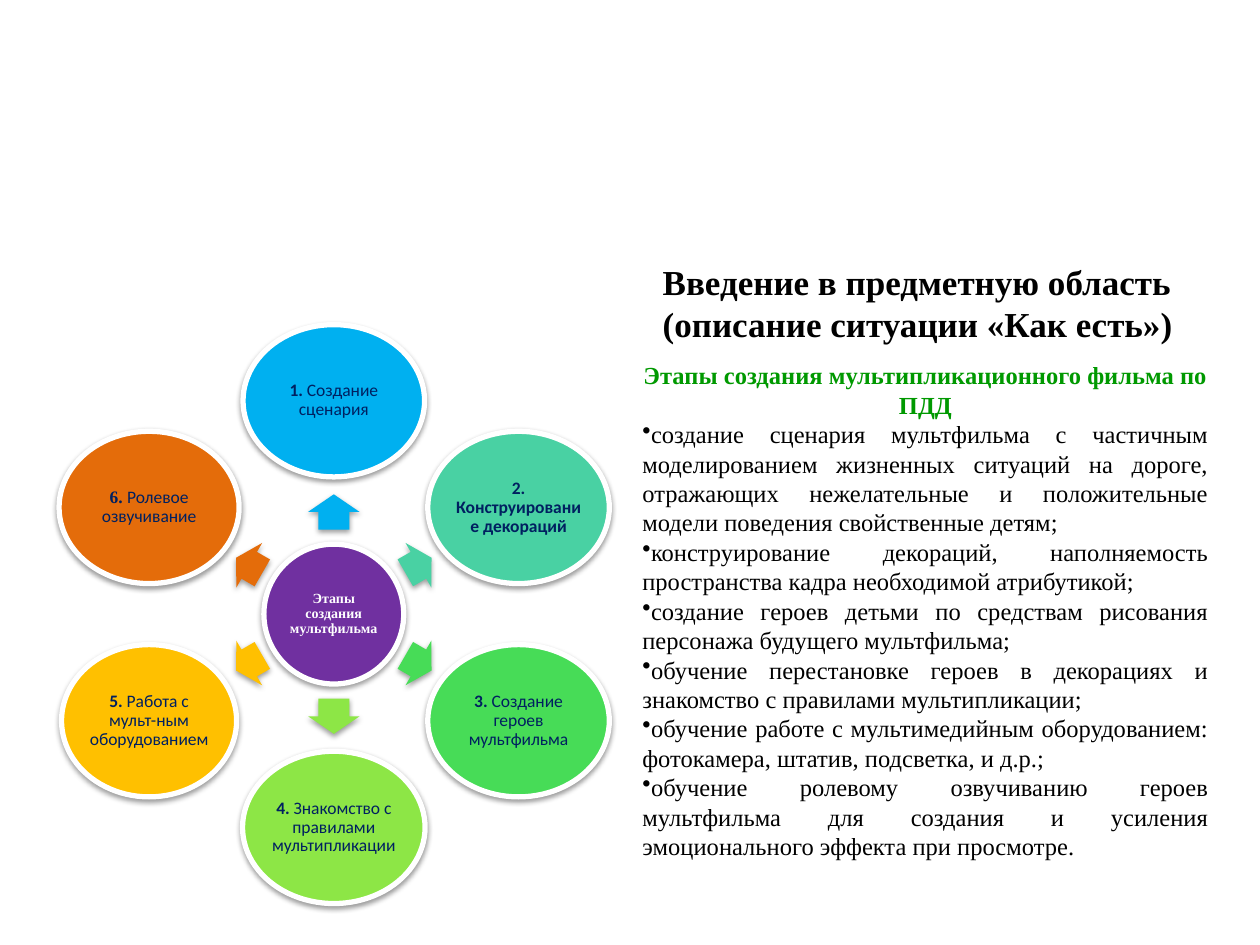
import math
from lxml import etree
from pptx import Presentation
from pptx import util as u
from pptx.dml.color import RGBColor
from pptx.enum import shapes, text
from pptx.oxml import ns

SERIF, SANS = "Times New Roman", "Calibri"
HUB_X, HUB_Y = 6.73, 12.38
RING = 4.3

STAGES = [
    ("1. ", "Создание сценария", "00B0F0", 3.66, SANS),
    ("2. Конструирование декораций", "", "49D1A3", 3.66, SANS),
    ("3. ", "Создание героев мультфильма", "47DC57", 3.66, SANS),
    ("4. ", "Знакомство с правилами мультипликации", "8DE646", 3.68, SANS),
    ("5. ", "Работа с мульт-ным оборудованием", "FFC000", 3.53, SANS),
    ("6. ", "Ролевое озвучивание", "E46C0A", 3.63, SERIF),
]
STEPS = [
    "создание сценария мультфильма с частичным моделированием жизненных ситуаций на дороге, "
    "отражающих нежелательные и положительные модели поведения свойственные детям;",
    "конструирование декораций, наполняемость пространства кадра необходимой атрибутикой;",
    "создание героев детьми по средствам рисования персонажа будущего мультфильма;",
    "обучение перестановке героев в декорациях и знакомство с правилами мультипликации;",
    "обучение работе с мультимедийным оборудованием: фотокамера, штатив, подсветка, и д.р.;",
    "обучение ролевому озвучиванию героев мультфильма для создания и усиления "
    "эмоционального эффекта при просмотре.",
]


def rgb(value):
    return RGBColor.from_string(value)


class Deck:
    def __init__(self):
        self.prs = Presentation()
        self.prs.slide_width, self.prs.slide_height = u.Cm(25.4), u.Cm(19.05)
        self.s = self.prs.slides.add_slide(self.prs.slide_layouts[6])

    def font(self, p, size, color, name=SERIF, bold=None):
        f = p.font
        f.size, f.name, f.bold = u.Pt(size), name, bold
        f.color.rgb = rgb(color)

    def shadow(self, sp):
        sp.shadow.inherit = False
        effects = sp._element.spPr.find(ns.qn("a:effectLst"))
        outer = etree.SubElement(effects, ns.qn("a:outerShdw"), blurRad=str(u.Pt(3.1)),
                                 dist=str(u.Pt(1.6)), dir="5400000", rotWithShape="0")
        color = etree.SubElement(outer, ns.qn("a:srgbClr"), val="000000")
        etree.SubElement(color, ns.qn("a:alpha"), val="38000")

    def shape(self, kind, cx, cy, w, h, fill):
        sp = self.s.shapes.add_shape(kind, u.Cm(cx - w / 2), u.Cm(cy - h / 2), u.Cm(w), u.Cm(h))
        sp.fill.solid()
        sp.fill.fore_color.rgb = rgb(fill)
        sp.line.fill.background()
        self.shadow(sp)
        return sp

    def circle(self, cx, cy, w, h, fill, runs, size, color, name):
        sp = self.shape(shapes.MSO_SHAPE.OVAL, cx, cy, w, h, fill)
        sp.line.color.rgb = rgb("FFFFFF")
        sp.line.width = u.Pt(3)
        tf = sp.text_frame
        tf.word_wrap = True
        tf.vertical_anchor = text.MSO_ANCHOR.MIDDLE
        tf.margin_left = tf.margin_right = tf.margin_top = tf.margin_bottom = u.Cm(0.03)
        p = tf.paragraphs[0]
        p.alignment = text.PP_ALIGN.CENTER
        p.line_spacing = 0.9
        self.font(p, size, color, name)
        for words, bold, run_font in runs:
            r = p.add_run()
            r.text = words
            r.font.bold = bold
            if run_font != name:
                r.font.name = run_font

    def arrow(self, cx, cy, length, angle, fill):
        sp = self.shape(shapes.MSO_SHAPE.RIGHT_ARROW, cx, cy, length, 1.04, fill)
        sp.adjustments[0], sp.adjustments[1] = 0.6, 0.5
        sp.rotation = angle % 360

    def textbox(self, x, y, w, h):
        tf = self.s.shapes.add_textbox(u.Cm(x), u.Cm(y), u.Cm(w), u.Cm(h)).text_frame
        tf.word_wrap = True
        return tf

    def paragraph(self, p, words, size, color, bold=None, align=None, bullet=False):
        p.text = words
        p.alignment = align
        if bullet:
            etree.SubElement(p._p.get_or_add_pPr(), ns.qn("a:buChar"), char="•")
        self.font(p, size, color, bold=bold)


def main():
    deck = Deck()
    title = deck.textbox(13.11, 5.13, 11.61, 2.34)
    deck.paragraph(title.paragraphs[0], "Введение в предметную область\v(описание ситуации «Как есть»)",
                   20, "000000", bold=True)

    deck.circle(HUB_X, HUB_Y, 2.82, 2.82, "7030A0",
                [("Этапы создания мультфильма", True, SERIF)], 8, "FFFFFF", SERIF)
    for i, (number, label, color, width, number_font) in enumerate(STAGES):
        angle = 60 * i - 90
        dx, dy = math.cos(math.radians(angle)), math.sin(math.radians(angle))
        reach, length = (2.06, 0.71) if i % 3 == 0 else (1.97, 0.61)
        deck.arrow(HUB_X + reach * dx, HUB_Y + reach * dy, length, angle, color)
        runs = [(number, True, number_font)]
        if label:
            runs.append((label, False, SANS))
        deck.circle(HUB_X + RING * dx, HUB_Y + RING * dy, width, 3.07, color,
                    runs, 10, "002060", SANS)

    tf = deck.textbox(12.7, 7.14, 11.91, 10.44)
    deck.paragraph(tf.paragraphs[0], "Этапы создания мультипликационного фильма по ПДД",
                   14, "009900", bold=True, align=text.PP_ALIGN.CENTER)
    for step in STEPS:
        deck.paragraph(tf.add_paragraph(), step, 14, "000000",
                       align=text.PP_ALIGN.JUSTIFY, bullet=True)
    deck.prs.save("out.pptx")


if __name__ == "__main__":
    main()
